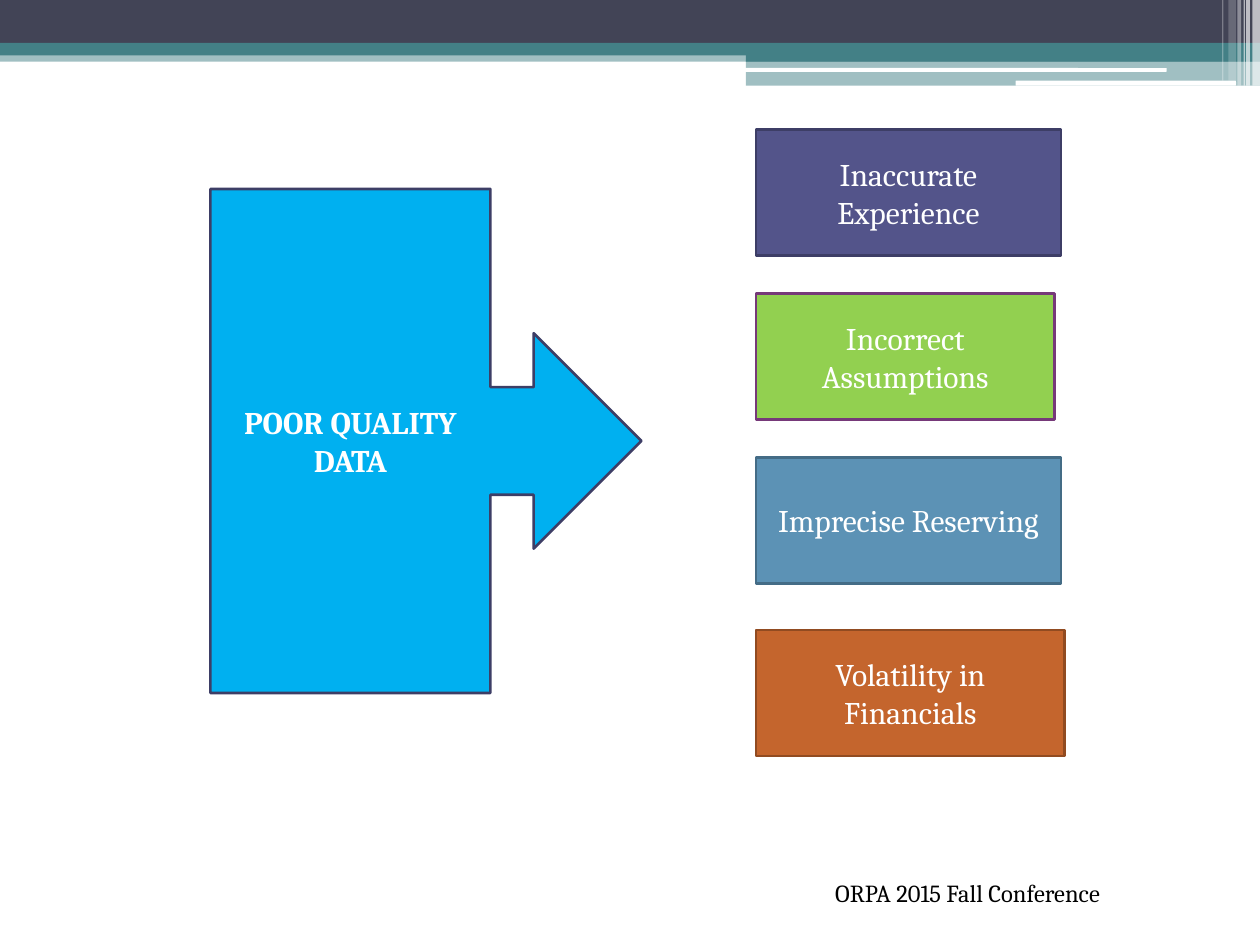
from lxml import etree
from pptx import Presentation
from pptx.dml.color import RGBColor
from pptx.enum import shapes, text
from pptx.oxml.ns import qn
from pptx.util import Inches, Pt

FONT = "Cambria"
WHITE = RGBColor(0xFF, 0xFF, 0xFF)
BLACK = RGBColor(0x00, 0x00, 0x00)
SLATE = RGBColor(0x42, 0x44, 0x56)
TEAL = RGBColor(0x43, 0x80, 0x86)
CYAN = RGBColor(0x00, 0xB0, 0xF0)
INDIGO = RGBColor(0x53, 0x54, 0x8A)
INDIGO_DARK = RGBColor(0x3D, 0x3E, 0x66)
GREEN = RGBColor(0x92, 0xD0, 0x50)
PURPLE = RGBColor(0x76, 0x39, 0x79)
BLUE = RGBColor(0x5C, 0x92, 0xB5)
BLUE_DARK = RGBColor(0x44, 0x6C, 0x86)
RUST = RGBColor(0xC4, 0x65, 0x2D)
RUST_DARK = RGBColor(0x91, 0x4B, 0x21)

RECT = shapes.MSO_SHAPE.RECTANGLE
ROUNDED = shapes.MSO_SHAPE.ROUNDED_RECTANGLE
CALLOUT = shapes.MSO_SHAPE.RIGHT_ARROW_CALLOUT


def add_block(page, box, fill, kind=RECT, line=None, opacity=100):
    """Add a filled preset shape; box is left, top, width, height in inches."""
    block = page.shapes.add_shape(kind, *map(Inches, box))
    block.shadow.inherit = False
    block.fill.solid()
    block.fill.fore_color.rgb = fill
    if opacity < 100:
        color = block.fill._xPr.find(qn("a:solidFill"))[0]
        etree.SubElement(color, qn("a:alpha")).set("val", str(opacity * 1000))
    if line is None:
        block.line.fill.background()
    else:
        block.line.color.rgb = line
        block.line.width = Pt(1.5)
    return block


def write(shape, words, size=18, color=WHITE, bold=False,
          align=text.PP_ALIGN.CENTER, anchor=text.MSO_ANCHOR.MIDDLE):
    frame = shape.text_frame
    frame.word_wrap = True
    frame.vertical_anchor = anchor
    para = frame.paragraphs[0]
    para.alignment = align
    span = para.add_run()
    span.text = words
    span.font.name = FONT
    span.font.size = Pt(size)
    span.font.bold = bold
    span.font.color.rgb = color


def add_banner(page, box):
    left, top, width, height = box
    right = left + width
    tab_left, tab_width = right - 4.08, 4.08
    add_block(page, (left, top + 0.4, width, 0.09), TEAL, opacity=50)
    add_block(page, (left, top, width, 0.34), SLATE)
    add_block(page, (left, top + 0.34, width, 0.1), TEAL)
    add_block(page, (tab_left, top + 0.39, tab_width, 0.1), TEAL)
    add_block(page, (tab_left, top + 0.48, tab_width, height - 0.48), TEAL, opacity=50)
    add_block(page, (tab_left - 0.01, top + 0.54, 3.35, 0.03), WHITE, ROUNDED)
    add_block(page, (right - 1.94, top + 0.64, 1.75, 0.04), WHITE, ROUNDED)

    # Distance from the right edge, width, height, opacity
    stripes = [
        (0.06, 0.06, height, 65),
        (0.11, 0.03, height, 65),
        (0.13, 0.01, height, 60),
        (0.18, 0.03, height, 40),
        (0.25, 0.06, height - 0.04, 20),
        (0.3, 0.01, height - 0.04, 30),
    ]
    for offset, stripe_width, stripe_height, opacity in stripes:
        add_block(page, (right - offset, top, stripe_width, stripe_height),
                  WHITE, opacity=opacity)


def add_cause(page, box):
    cause = add_block(page, box, CYAN, CALLOUT, INDIGO_DARK)
    write(cause, "POOR QUALITY DATA", bold=True)


def add_effects(page, box):
    left, top, width, height = box
    # Wording, offset from the top, width, fill, line
    effects = [
        ("Inaccurate Experience", 0, width - 0.03, INDIGO, INDIGO_DARK),
        ("Incorrect Assumptions", 1.3, width - 0.08, GREEN, PURPLE),
        ("Imprecise Reserving", 2.6, width - 0.03, BLUE, BLUE_DARK),
        ("Volatility in Financials", height - 1, width, RUST, RUST_DARK),
    ]
    for words, offset, effect_width, fill, line in effects:
        effect = add_block(page, (left, top + offset, effect_width, 1), fill, line=line)
        write(effect, words)


def add_footer(page, box):
    footer = page.shapes.add_textbox(*map(Inches, box))
    write(footer, "ORPA 2015 Fall Conference", size=14, color=BLACK,
          align=text.PP_ALIGN.LEFT, anchor=text.MSO_ANCHOR.TOP)
    footer.text_frame.auto_size = text.MSO_AUTO_SIZE.SHAPE_TO_FIT_TEXT


def main():
    deck = Presentation()
    deck.slide_width, deck.slide_height = Inches(10), Inches(7.5)
    page = deck.slides.add_slide(deck.slide_layouts[6])
    add_banner(page, (0, 0, 10, 0.68))
    add_footer(page, (6.53, 6.92, 2.67, 0.34))
    add_effects(page, (6, 1.03, 2.45, 4.97))
    add_cause(page, (1.67, 1.5, 3.42, 4))
    deck.save("out.pptx")


if __name__ == "__main__":
    main()
